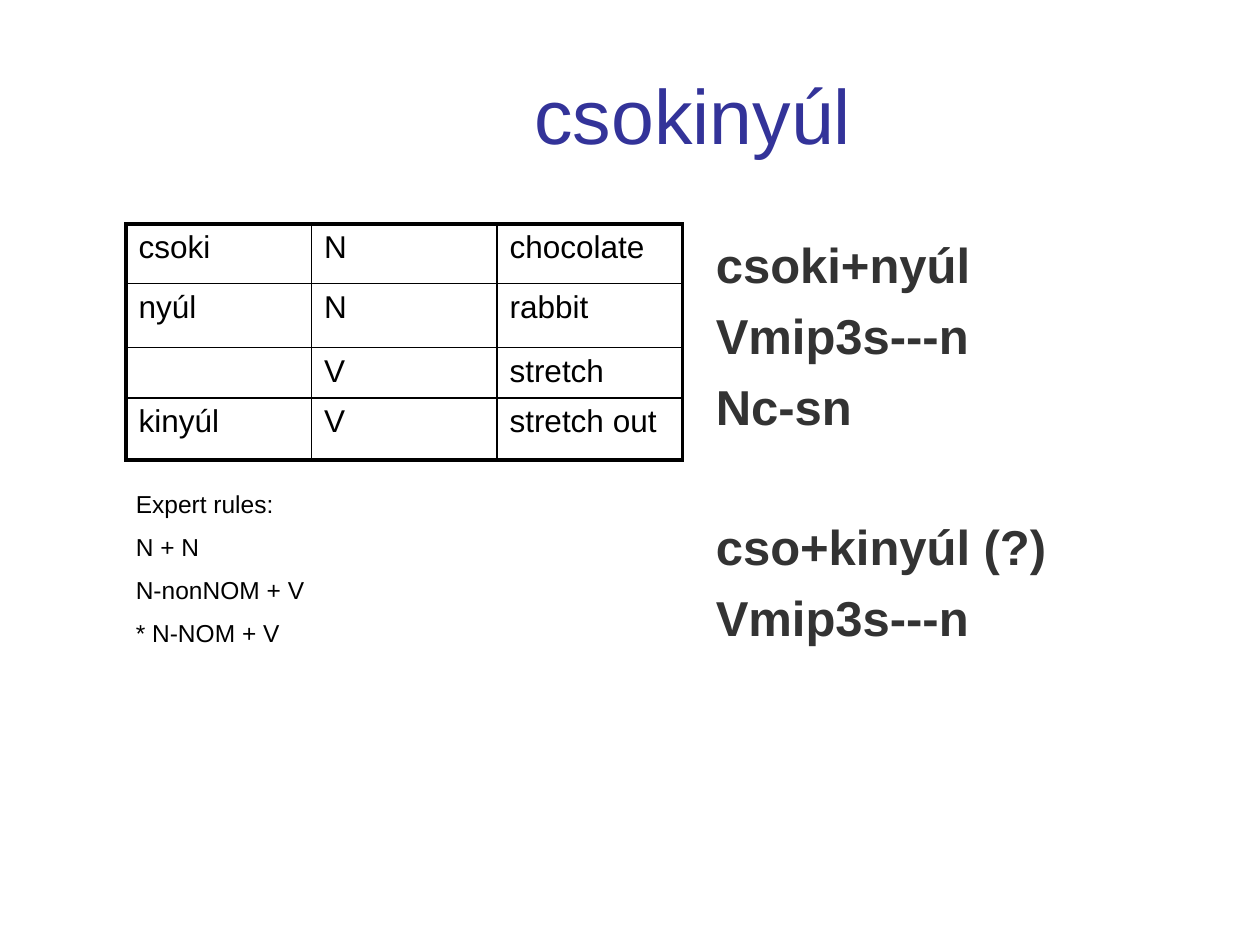
"""Build the slide on analysing the word csokinyúl."""
from dataclasses import dataclass

from lxml import etree
from pptx import Presentation
from pptx.dml.color import RGBColor
from pptx.enum.text import MSO_ANCHOR, PP_ALIGN
from pptx.oxml.ns import qn
from pptx.util import Pt

TOP, MIDDLE = MSO_ANCHOR.TOP, MSO_ANCHOR.MIDDLE
LEFT, CENTER = PP_ALIGN.LEFT, PP_ALIGN.CENTER
FONT = "Arial"
BLACK = "000000"
OUTER_LINE, INNER_LINE = 2.25, 1
TABLE_LEFT, TABLE_TOP, COLUMN_WIDTH = 72, 128, 106
ROW_HEIGHTS = (34, 36.5, 27.5, 35.5)
LEXICON = (
    ("csoki", "N", "chocolate"),
    ("nyúl", "N", "rabbit"),
    ("", "V", "stretch"),
    ("kinyúl", "V", "stretch out"),
)


@dataclass(frozen=True)
class TextBlock:
    """A text box whose lines pair wording with the space before it."""

    frame: tuple[float, float, float, float]
    lines: tuple[tuple[str, float], ...]
    size: float
    color: str = BLACK
    bold: bool = False
    align: PP_ALIGN = LEFT
    anchor: MSO_ANCHOR = TOP
    inset_top: float = 3.6


BLOCKS = (
    TextBlock((72, 20, 648, 90), (("csokinyúl", 0),), 44, "333399",
              align=CENTER, anchor=MIDDLE),
    TextBlock(
        (402, 128, 318, 356),
        (("csoki+nyúl", 0), ("Vmip3s---n", 7), ("Nc-sn", 7),
         ("cso+kinyúl (?)", 46), ("Vmip3s---n", 7)),
        28, "333333", bold=True, inset_top=6,
    ),
    TextBlock(
        (70.5, 276, 323, 127),
        (("Expert rules:", 0), ("N + N", 7.7), ("N-nonNOM + V", 7.7),
         ("* N-NOM + V", 7.7)),
        14,
    ),
)


def rgb(color: str) -> RGBColor:
    """Turn a hex string into a colour."""
    return RGBColor.from_string(color)


def apply_format(target, values: dict) -> None:
    """Set every named attribute on the target."""
    for name, value in values.items():
        setattr(target, name, value)


def write_span(para, text: str, size: float, color: str, bold: bool = False) -> None:
    """Add one formatted span to a paragraph."""
    span = para.add_run()
    span.text = text
    apply_format(span.font, {"name": FONT, "size": Pt(size), "bold": bold})
    span.font.color.rgb = rgb(color)


def draw_block(page, block: TextBlock) -> None:
    """Draw a text block on the page."""
    box = page.shapes.add_textbox(*map(Pt, block.frame))
    apply_format(box.text_frame, {
        "word_wrap": True,
        "vertical_anchor": block.anchor,
        "margin_top": Pt(block.inset_top),
    })
    for index, (text, space) in enumerate(block.lines):
        para = box.text_frame.add_paragraph() if index else box.text_frame.paragraphs[0]
        apply_format(para, {"alignment": block.align, "space_before": Pt(space)})
        write_span(para, text, block.size, block.color, block.bold)


def set_border(cell, side: str, width: float) -> None:
    """Give one side of a cell a solid black line."""
    properties = cell._tc.get_or_add_tcPr()
    line = etree.SubElement(properties, qn(f"a:ln{side}"), w=str(int(Pt(width))))
    fill = etree.SubElement(line, qn("a:solidFill"))
    etree.SubElement(fill, qn("a:srgbClr"), val=BLACK)


def draw_lexicon(page) -> None:
    """Draw the lexicon table with a heavy outline and thin inner lines."""
    row_count, column_count = len(LEXICON), len(LEXICON[0])
    table = page.shapes.add_table(
        row_count, column_count, Pt(TABLE_LEFT), Pt(TABLE_TOP),
        Pt(COLUMN_WIDTH * column_count), Pt(sum(ROW_HEIGHTS)),
    ).table
    apply_format(table, {"first_row": False, "horz_banding": False})
    for column in table.columns:
        column.width = Pt(COLUMN_WIDTH)
    for row_index, entry in enumerate(LEXICON):
        table.rows[row_index].height = Pt(ROW_HEIGHTS[row_index])
        for column_index, text in enumerate(entry):
            cell = table.cell(row_index, column_index)
            edges = {
                "L": column_index == 0,
                "R": column_index == column_count - 1,
                "T": row_index == 0,
                "B": row_index == row_count - 1,
            }
            for side, is_outer in edges.items():
                set_border(cell, side, OUTER_LINE if is_outer else INNER_LINE)
            cell.fill.background()
            if text:
                write_span(cell.text_frame.paragraphs[0], text, 18, BLACK)


def main() -> None:
    """Build and save the deck."""
    deck = Presentation()
    apply_format(deck, {"slide_width": Pt(720), "slide_height": Pt(540)})
    page = deck.slides.add_slide(deck.slide_layouts[6])
    for block in BLOCKS:
        draw_block(page, block)
    draw_lexicon(page)
    deck.save("out.pptx")


if __name__ == "__main__":
    main()
